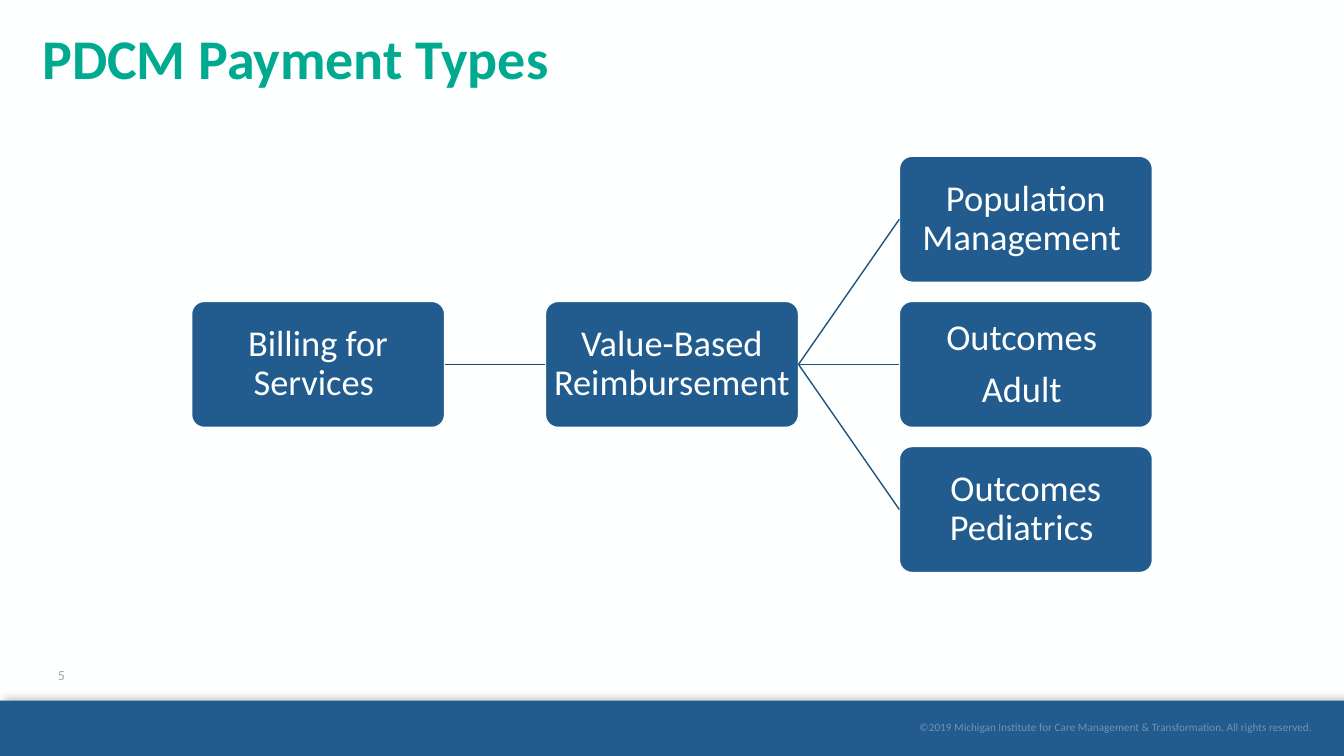
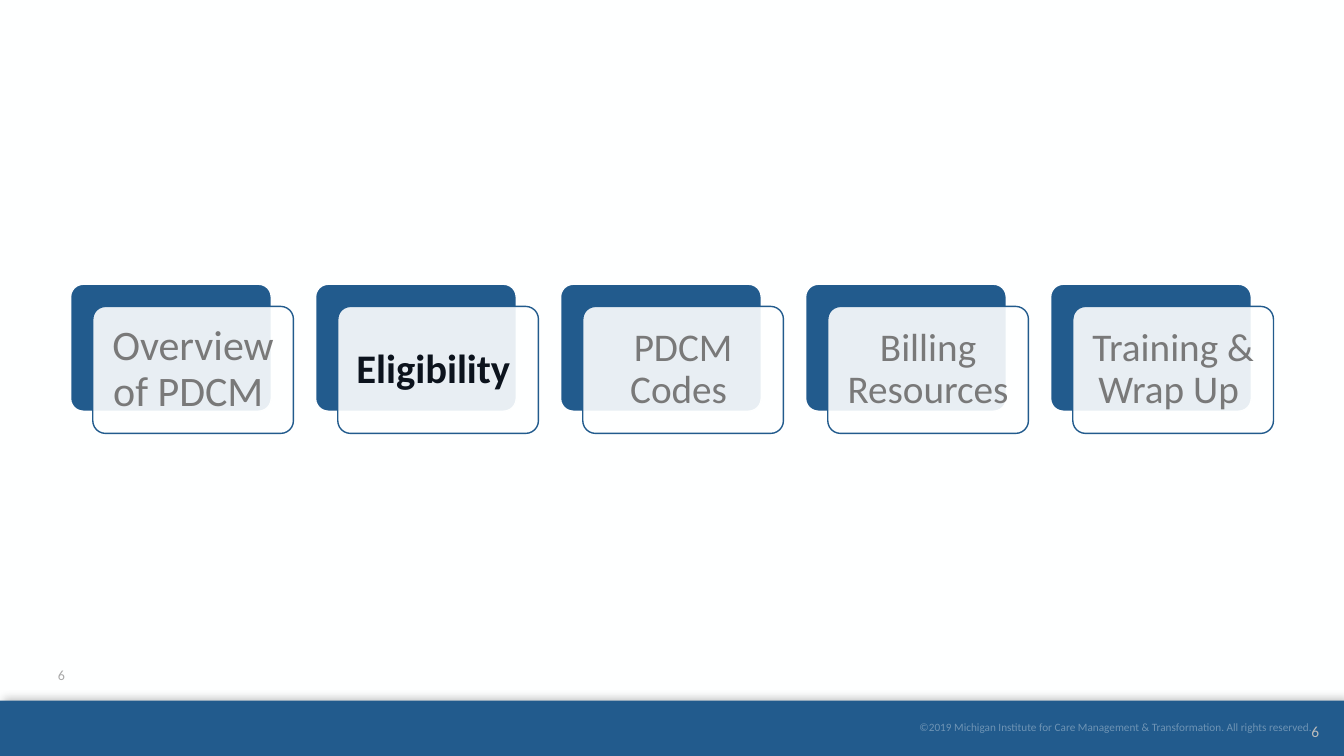
"""Build the two care management payment slides."""
from lxml import etree
from pptx import Presentation
from pptx.dml.color import RGBColor
from pptx.enum.shapes import MSO_CONNECTOR, MSO_SHAPE
from pptx.enum.text import MSO_ANCHOR, MSO_AUTO_SIZE, PP_ALIGN
from pptx.oxml.ns import qn
from pptx.util import Pt

PX = 9144
WHITE = RGBColor(0xFE, 0xFF, 0xFF)
BLUE = RGBColor(0x22, 0x5B, 0x8D)
DARK_BLUE = RGBColor(0x1B, 0x49, 0x71)
MID_BLUE = RGBColor(0x1F, 0x53, 0x80)
GREEN = RGBColor(0x00, 0xAA, 0x90)
INK = RGBColor(0x0C, 0x13, 0x1D)
GREY = RGBColor(0x79, 0x79, 0x79)
NUMBER_GREY = RGBColor(0xA8, 0xA8, 0xA8)
CORNER_GREY = RGBColor(0xBC, 0xBC, 0xBC)

RECT = MSO_SHAPE.RECTANGLE
ROUNDED = MSO_SHAPE.ROUNDED_RECTANGLE
STRAIGHT = MSO_CONNECTOR.STRAIGHT
TOP, MIDDLE = MSO_ANCHOR.TOP, MSO_ANCHOR.MIDDLE
LEFT, CENTER, RIGHT = PP_ALIGN.LEFT, PP_ALIGN.CENTER, PP_ALIGN.RIGHT
NO_AUTOFIT = MSO_AUTO_SIZE.NONE
LEFT_SIDE, RIGHT_SIDE = 1, 3

FONT = "Calibri"
LABEL = {"alignment": CENTER, "line_spacing": 0.9, "space_after": Pt(9)}
COPYRIGHT = ("©2019 Michigan Institute for Care Management & Transformation. "
             "All rights reserved.")
STEPS = [
    ("Overview of PDCM ", 30, GREY, False),
    ("Eligibility ", 29, INK, True),
    ("PDCM Codes ", 28, GREY, False),
    ("Billing Resources", 28, GREY, False),
    ("Training & Wrap Up ", 28, GREY, False),
]


def scaled(*lengths):
    """Turn px lengths into EMU."""
    return [length * PX for length in lengths]


def apply(target, formats):
    """Set each format value on the target."""
    for key, value in formats.items():
        setattr(target, key, value)


def write_text(frame, lines, size, colour, paragraph_format, insets,
               bold=False, anchor=MIDDLE):
    """Fill a text frame with equally formatted paragraphs."""
    sides = ("margin_left", "margin_top", "margin_right", "margin_bottom")
    apply(frame, {"word_wrap": True, "auto_size": NO_AUTOFIT,
                  "vertical_anchor": anchor, **dict(zip(sides, scaled(*insets)))})
    frame.text = "\n".join(lines)
    for paragraph in frame.paragraphs:
        apply(paragraph, paragraph_format)
        for run in paragraph.runs:
            apply(run.font, {"name": FONT, "size": Pt(size), "bold": bold})
            run.font.color.rgb = colour


def set_opacity(parent, percent):
    """Make the first colour inside the parent partly transparent."""
    colour = parent.find(".//" + qn("a:srgbClr"))
    etree.SubElement(colour, qn("a:alpha"), val=str(percent * 1000))


def add_block(slide, preset, place, fill, line=None):
    """Add a filled shape, outlined when a line colour is given."""
    block = slide.shapes.add_shape(preset, *scaled(*place))
    block.shadow.inherit = False
    block.fill.solid()
    block.fill.fore_color.rgb = fill
    if line is None:
        block.line.fill.background()
    else:
        block.line.color.rgb = line
        block.line.width = Pt(1)
    if preset == ROUNDED:
        block.adjustments[0] = 0.1
    return block


def add_note(slide, place, text, size, colour, paragraph_format, insets):
    """Add a small one-line text box."""
    note = slide.shapes.add_textbox(*scaled(*place))
    write_text(note.text_frame, [text], size, colour, paragraph_format, insets)
    return note


def add_page_number(slide, number):
    """Add the page number above the footer band."""
    add_note(slide, (33, 650, 56, 40), number, 10, NUMBER_GREY,
             {"alignment": CENTER}, (0, 5, 0, 5))


def add_title(slide, text):
    """Place and format the title placeholder."""
    title = slide.shapes.title
    apply(title, dict(zip(("left", "top", "width", "height"),
                          scaled(32, 26, 1150, 145))))
    write_text(title.text_frame, [text], 40, GREEN,
               {"alignment": LEFT, "line_spacing": 0.9}, (10, 5, 10, 5),
               bold=True, anchor=TOP)


def style_master(master, slide):
    """Give the master its background, footer band and copyright line."""
    master.background.fill.solid()
    master.background.fill.fore_color.rgb = WHITE
    band = add_block(slide, RECT, (0, 695, 1333, 55), BLUE)
    effects = band.element.spPr.find(qn("a:effectLst"))
    shadow = etree.SubElement(effects, qn("a:outerShdw"), blurRad=str(Pt(6)),
                              dist=str(Pt(3)), dir=str(315 * 60000))
    etree.SubElement(shadow, qn("a:srgbClr"), val="000000")
    set_opacity(shadow, 25)
    rights = add_note(slide, (660, 708, 642, 27), COPYRIGHT, 8, WHITE,
                      {"alignment": RIGHT}, (10, 5, 0, 5))
    set_opacity(rights.element.txBody, 35)
    for offset, part in enumerate((band, rights)):
        part.element.nvSpPr.cNvPr.set("id", str(100 + offset))
        master.shapes.element.insert(2 + offset, part.element)


def add_payment_box(slide, column, row, *lines):
    """Add a payment type at its grid position."""
    box = add_block(slide, ROUNDED, (190 + 351 * column, 155 + 144 * row, 251, 125),
                    BLUE, WHITE)
    write_text(box.text_frame, lines, 26, WHITE, LABEL, (2, 2, 2, 2))
    return box


def link(slide, source, target, colour):
    """Join the right side of one box to the left side of another."""
    connector = slide.shapes.add_connector(STRAIGHT, 0, 0, 0, 0)
    connector.begin_connect(source, RIGHT_SIDE)
    connector.end_connect(target, LEFT_SIDE)
    connector.line.color.rgb = colour
    connector.line.width = Pt(1)
    etree.SubElement(connector.element.spPr, qn("a:effectLst"))


def add_step(slide, index, text, size, colour, bold):
    """Add an agenda step: a blue card under a translucent panel."""
    left, top, shift = 70 + 243 * index, 282, 22
    add_block(slide, ROUNDED, (left, top, 199, 126), BLUE, WHITE)
    panel = add_block(slide, ROUNDED, (left + shift, top + shift, 199, 126),
                      WHITE, BLUE)
    set_opacity(panel.element.spPr, 90)
    write_text(panel.text_frame, [text], size, colour, LABEL,
               (12, 12, 12, 12), bold)


def build_payment_types(slide):
    """Draw the payment type tree."""
    add_title(slide, "PDCM Payment Types")
    add_page_number(slide, "5")
    billing = add_payment_box(slide, 0, 1, "Billing for Services ")
    value_based = add_payment_box(slide, 1, 1, "Value-Based Reimbursement ")
    link(slide, billing, value_based, DARK_BLUE)
    branches = [("Population Management ",), ("Outcomes ", "Adult "),
                ("Outcomes Pediatrics ",)]
    for row, lines in enumerate(branches):
        branch = add_payment_box(slide, 2, row, *lines)
        link(slide, value_based, branch, MID_BLUE)


def build_agenda(slide):
    """Draw the agenda steps with the current one in bold."""
    add_page_number(slide, "6")
    add_note(slide, (1280, 706, 49, 40), "6", 11, CORNER_GREY,
             {"alignment": CENTER, "space_after": Pt(6)}, (10, 5, 10, 5))
    for index, step in enumerate(STEPS):
        add_step(slide, index, *step)


def main():
    """Build and save the presentation."""
    prs = Presentation()
    prs.slide_width, prs.slide_height = scaled(1333, 750)
    title_only, blank = prs.slide_layouts[5], prs.slide_layouts[6]
    payment_types = prs.slides.add_slide(title_only)
    style_master(prs.slide_master, payment_types)
    build_payment_types(payment_types)
    build_agenda(prs.slides.add_slide(blank))
    prs.save("out.pptx")


if __name__ == "__main__":
    main()
